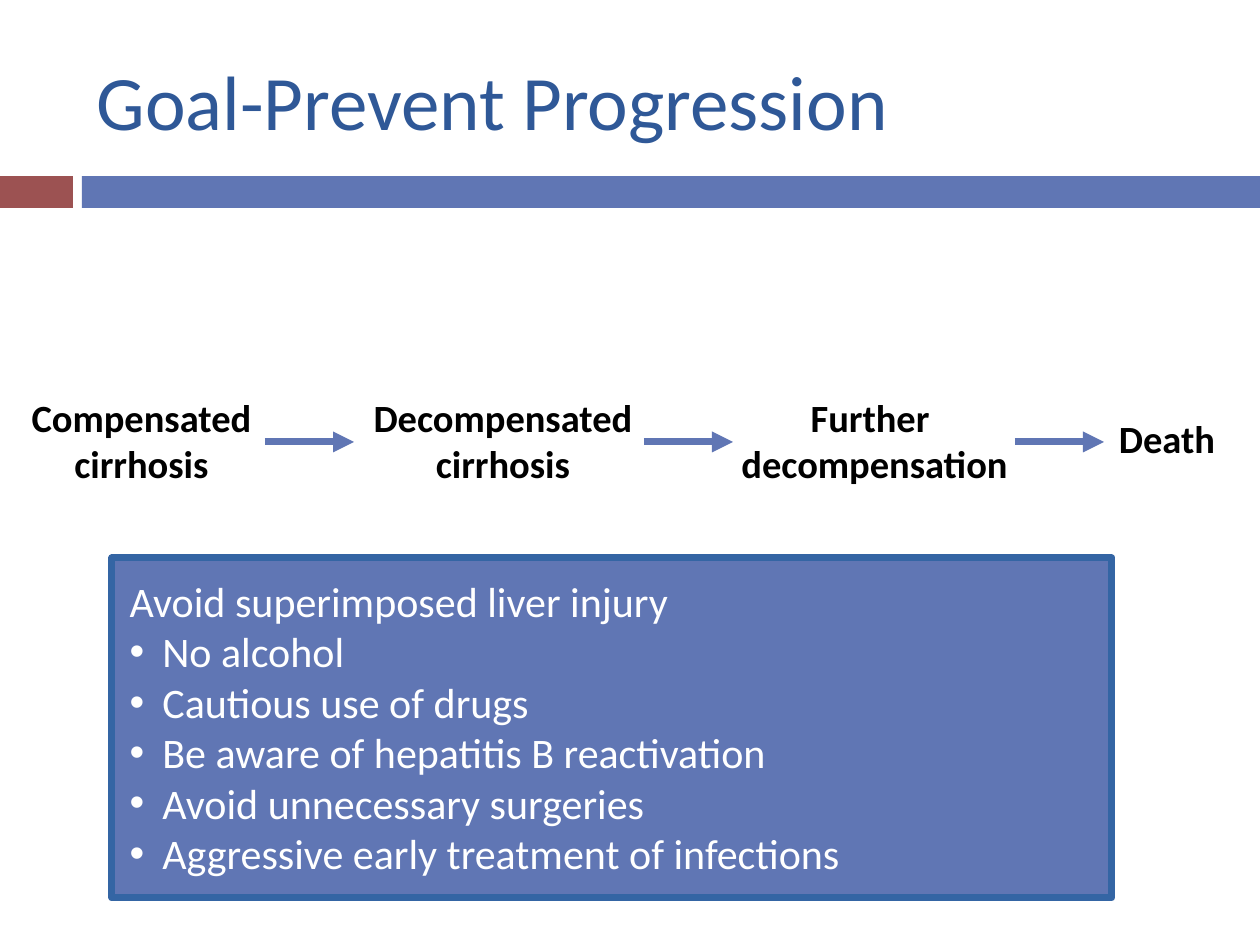
from lxml import etree
from pptx import Presentation
from pptx import util as u
from pptx.dml.color import RGBColor
from pptx.enum import shapes, text
from pptx.oxml import ns

PX = 914400 // 126
FONT = "Calibri"
NAVY = RGBColor(0x2F, 0x58, 0x97)
BLUE = RGBColor(0x60, 0x76, 0xB4)
BORDER = RGBColor(0x34, 0x65, 0xA4)
RED = RGBColor(0x9C, 0x52, 0x52)
BLACK = RGBColor(0, 0, 0)
WHITE = RGBColor(0xFF, 0xFF, 0xFF)

STAGES = [
    (20, 394, 243, 97, ["Compensated", "cirrhosis"]),
    (363, 394, 280, 97, ["Decompensated", "cirrhosis"]),
    (736, 394, 277, 97, ["Further ", "decompensation"]),
    (1113, 415, 108, 54, ["Death"]),
]
ARROW_STARTS = [265, 644, 1015]
ARROW_LENGTH = 89
ARROW_Y = 442
ADVICE = [
    "No alcohol",
    "Cautious use of drugs",
    "Be aware of hepatitis B reactivation",
    "Avoid unnecessary surgeries",
    "Aggressive early treatment of infections",
]


def px(*lengths):
    return [u.Emu(length * PX) for length in lengths]


def set_margins(frame, margin):
    frame.margin_left = frame.margin_right = margin
    frame.margin_top = frame.margin_bottom = margin


def write_lines(frame, lines, size, color, align, bold=False):
    for index, line in enumerate(lines):
        paragraph = frame.paragraphs[0] if index == 0 else frame.add_paragraph()
        paragraph.text = line
        paragraph.alignment = align
        font = paragraph.font
        font.name, font.size, font.bold = FONT, u.Pt(size), bold
        font.color.rgb = color


def add_title(slide, title):
    shape = slide.shapes.title
    shape.left, shape.top, shape.width, shape.height = px(84, 32, 1124, 136)
    frame = shape.text_frame
    frame.vertical_anchor = text.MSO_ANCHOR.MIDDLE
    write_lines(frame, [title], 44, NAVY, text.PP_ALIGN.LEFT)


def add_rectangle(slide, box, fill):
    shape = slide.shapes.add_shape(shapes.MSO_SHAPE.RECTANGLE, *px(*box))
    shape.shadow.inherit = False
    shape.fill.solid()
    shape.fill.fore_color.rgb = fill
    shape.line.fill.background()
    return shape


def add_stage(slide, box, lines):
    frame = slide.shapes.add_textbox(*px(*box)).text_frame
    set_margins(frame, 0)
    frame.word_wrap = False
    frame.auto_size = text.MSO_AUTO_SIZE.SHAPE_TO_FIT_TEXT
    write_lines(frame, lines, 22, BLACK, text.PP_ALIGN.CENTER, bold=True)


def add_arrow(slide, left):
    arrow = slide.shapes.add_connector(
        shapes.MSO_CONNECTOR.STRAIGHT,
        *px(left, ARROW_Y, left + ARROW_LENGTH, ARROW_Y))
    arrow.line.color.rgb = BLUE
    arrow.line.width = u.Pt(4)
    line = arrow.line._get_or_add_ln()
    etree.SubElement(line, ns.qn("a:tailEnd"), type="triangle")
    etree.SubElement(arrow._element.spPr, ns.qn("a:effectLst"))


def add_bullet(paragraph, indent):
    properties = paragraph._p.get_or_add_pPr()
    properties.set("marL", str(indent))
    properties.set("indent", str(-indent))
    etree.SubElement(properties, ns.qn("a:buFont"), typeface="Arial")
    etree.SubElement(properties, ns.qn("a:buChar"), char="•")
    default = properties.find(ns.qn("a:defRPr"))
    if default is not None:
        properties.append(default)


def add_advice(slide, heading, items):
    shape = add_rectangle(slide, (112, 558, 1000, 340), BLUE)
    shape.line.color.rgb = BORDER
    shape.line.width = u.Pt(4)
    frame = shape.text_frame
    set_margins(frame, u.Inches(0.14))
    frame.word_wrap = True
    frame.auto_size = text.MSO_AUTO_SIZE.SHAPE_TO_FIT_TEXT
    frame.vertical_anchor = text.MSO_ANCHOR.TOP
    write_lines(frame, [heading, *items], 24, WHITE, text.PP_ALIGN.LEFT)
    for paragraph in frame.paragraphs[1:]:
        add_bullet(paragraph, u.Inches(0.26))


def main():
    presentation = Presentation()
    presentation.slide_width = u.Inches(10)
    presentation.slide_height = u.Inches(7.5)
    slide = presentation.slides.add_slide(presentation.slide_layouts[5])
    add_rectangle(slide, (0, 176, 73, 32), RED)
    add_rectangle(slide, (82, 176, 1178, 32), BLUE)
    add_title(slide, "Goal-Prevent Progression")
    for *box, lines in STAGES:
        add_stage(slide, box, lines)
    for left in ARROW_STARTS:
        add_arrow(slide, left)
    add_advice(slide, "Avoid superimposed liver injury", ADVICE)
    presentation.save("out.pptx")


if __name__ == "__main__":
    main()
